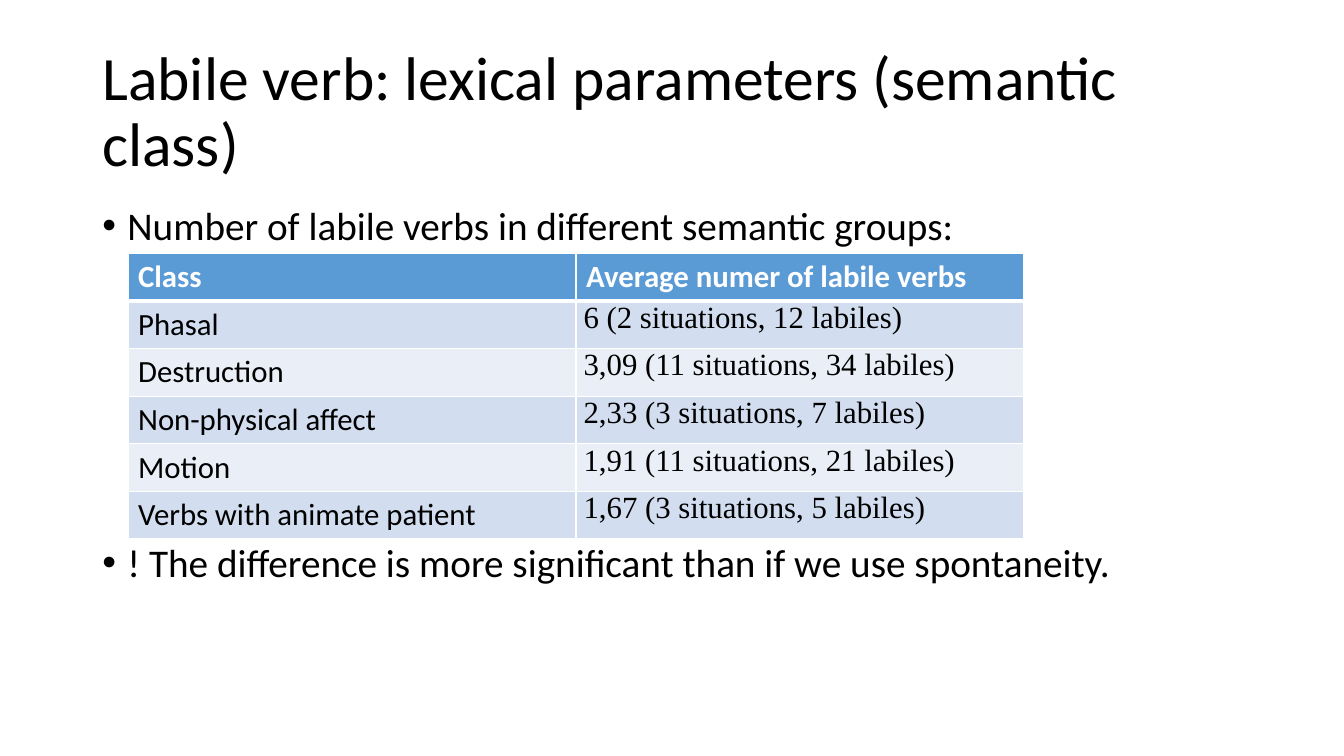
from lxml.etree import SubElement
from pptx import Presentation
from pptx.dml.color import RGBColor
from pptx.enum.text import MSO_ANCHOR as Anchor, PP_ALIGN as Align
from pptx.oxml.ns import qn
from pptx.util import Pt

BLACK, WHITE, BLUE = "000000", "FFFFFF", "5B9BD5"
BANDS = ("D2DEEF", "EAEFF7")
HEADINGS = ("Class", "Average numer of labile verbs")
VERB_CLASSES = (
    ("Phasal", "6 (2 situations, 12 labiles)"),
    ("Destruction", "3,09 (11 situations, 34 labiles)"),
    ("Non-physical affect", "2,33 (3 situations, 7 labiles)"),
    ("Motion", "1,91 (11 situations, 21 labiles)"),
    ("Verbs with animate patient", "1,67 (3 situations, 5 labiles)"),
)


def color(value):
    """Turn a hex string into a colour."""
    return RGBColor.from_string(value)


def set_font(para, size, name="Calibri", tone=BLACK, bold=False):
    """Set the font of a whole paragraph."""
    font = para.font
    font.size, font.name, font.bold = Pt(size), name, bold
    font.color.rgb = color(tone)


def add_text(page, left, top, width, height, anchor=Anchor.TOP):
    """Add a wrapping text box and return its text frame."""
    box = page.shapes.add_textbox(Pt(left), Pt(top), Pt(width), Pt(height))
    frame = box.text_frame
    frame.word_wrap = True
    frame.vertical_anchor = anchor
    return frame


def write_bullet(para, text, space_before):
    """Write a bulleted paragraph with a hanging indent."""
    para.text = text
    para.line_spacing = 0.9
    para.space_before = Pt(space_before)
    set_font(para, 28)
    props = para._p.get_or_add_pPr()
    props.set("marL", str(Pt(18)))
    props.set("indent", str(Pt(-18)))
    SubElement(props, qn("a:buFont"), typeface="Arial")
    SubElement(props, qn("a:buChar"), char="•")


def add_borders(cell, bottom):
    """Draw white borders around a cell, with its own bottom width."""
    props = cell._tc.get_or_add_tcPr()
    widths = {"lnL": 1, "lnR": 1, "lnT": 1, "lnB": bottom}
    for index, (side, width) in enumerate(widths.items()):
        line = SubElement(props, qn(f"a:{side}"), w=str(Pt(width)))
        fill = SubElement(line, qn("a:solidFill"))
        SubElement(fill, qn("a:srgbClr"), val=WHITE)
        props.insert(index, line)


def fill_cell(cell, text, fill, header=False, serif=False):
    """Write and style one table cell."""
    cell.text = text
    cell.fill.solid()
    cell.fill.fore_color.rgb = color(fill)
    para = cell.text_frame.paragraphs[0]
    name = "Times New Roman" if serif else "Calibri"
    set_font(para, 22, name, WHITE if header else BLACK, header)
    if serif:
        para.alignment = Align.JUSTIFY
        cell.margin_left = cell.margin_right = Pt(5.4)
        cell.margin_top = cell.margin_bottom = 0
    add_borders(cell, 3 if header else 1)


def add_class_table(page):
    """Add the table of semantic classes."""
    rows = (HEADINGS, *VERB_CLASSES)
    frame = page.shapes.add_table(len(rows), 2, Pt(91.5), Pt(181), Pt(640), Pt(34 * len(rows)))
    for row, texts in enumerate(rows):
        header = row == 0
        fill = BLUE if header else BANDS[(row - 1) % 2]
        for column, text in enumerate(texts):
            serif = column == 1 and not header
            fill_cell(frame.table.cell(row, column), text, fill, header, serif)


def main():
    """Build the slide and save it."""
    deck = Presentation()
    deck.slide_width, deck.slide_height = Pt(960), Pt(540)
    page = deck.slides.add_slide(deck.slide_layouts[6])
    title = add_text(page, 66, 28.75, 828, 104.4, Anchor.MIDDLE).paragraphs[0]
    title.text = "Labile verb: lexical parameters (semantic class)"
    title.line_spacing = 0.9
    set_font(title, 44)
    body = add_text(page, 66, 143.75, 828, 342.6)
    write_bullet(body.paragraphs[0], "Number of labile verbs in different semantic groups:", 10)
    write_bullet(body.add_paragraph(),
                 "! The difference is more significant than if we use spontaneity.", 210.5)
    add_class_table(page)
    deck.save("out.pptx")


if __name__ == "__main__":
    main()
